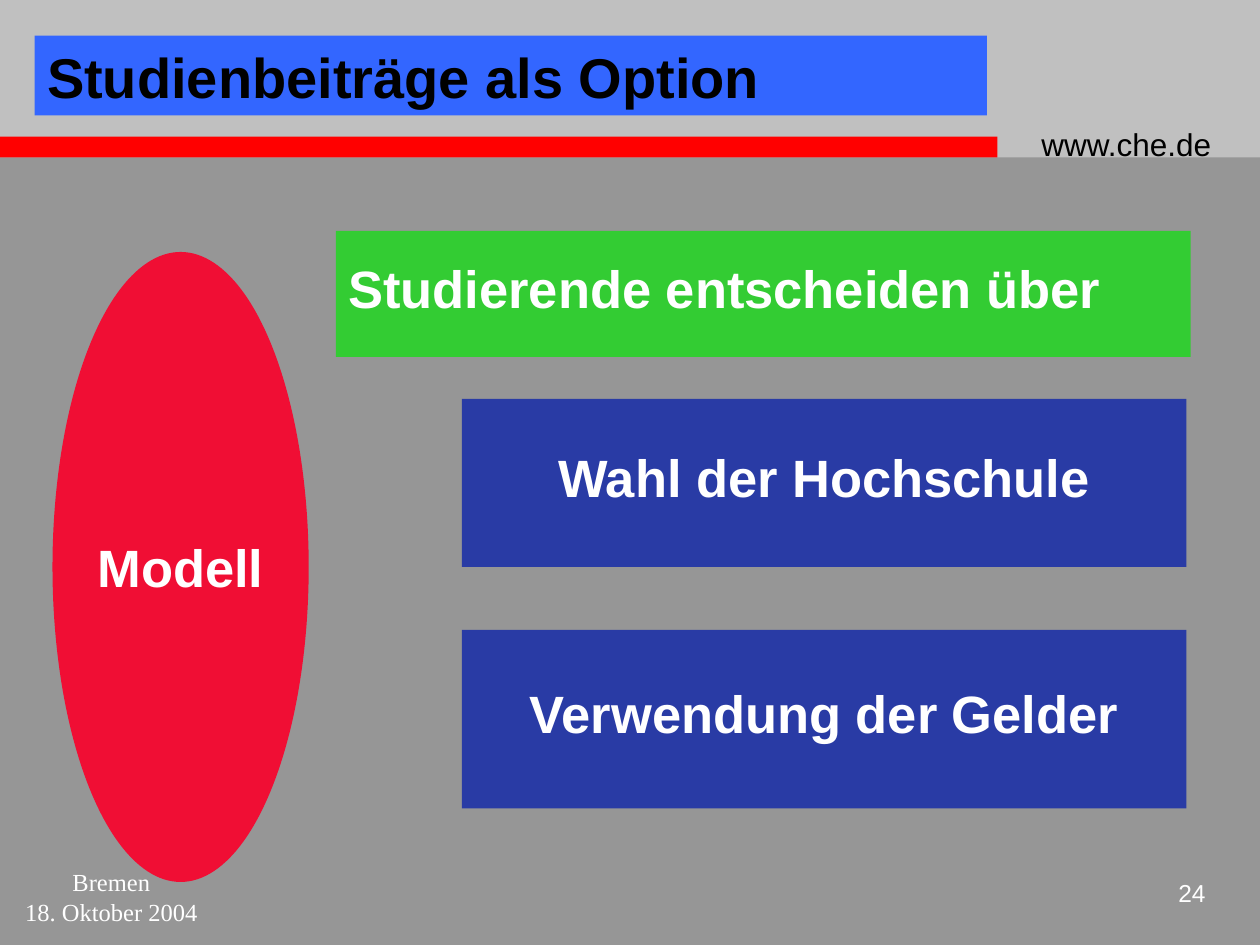
"""Builds the slide "Studienbeiträge als Option" on a grid of 120 columns by 90 rows."""
import pptx
import pptx.dml.color
import pptx.enum.shapes
import pptx.enum.text
import pptx.util

COLORS = {
    "background": "969696",
    "header": "C0C0C0",
    "rule": "FF0000",
    "title": "3366FF",
    "lead": "33CC33",
    "choice": "293BA5",
    "model": "F00E34",
    "dark": "000000",
    "light": "FFFFFF",
}
RECTANGLE = pptx.enum.shapes.MSO_SHAPE.RECTANGLE
OVAL = pptx.enum.shapes.MSO_SHAPE.OVAL
LEFT = pptx.enum.text.PP_ALIGN.LEFT
CENTER = pptx.enum.text.PP_ALIGN.CENTER
RIGHT = pptx.enum.text.PP_ALIGN.RIGHT

deck = pptx.Presentation()
deck.slide_width = pptx.util.Inches(10)
deck.slide_height = pptx.util.Inches(7.5)
column = deck.slide_width / 120
row = deck.slide_height / 90
slide = deck.slides.add_slide(deck.slide_layouts[6])


def paint(fill, color):
    fill.solid()
    fill.fore_color.rgb = pptx.dml.color.RGBColor.from_string(COLORS[color])


def write(box, lines, size, color, align, font="Arial", bold=False, spacing=None):
    for index, line in enumerate(lines):
        para = box.text_frame.paragraphs[0] if index == 0 else box.text_frame.add_paragraph()
        for name, value in {"alignment": align, "line_spacing": spacing}.items():
            setattr(para, name, value)
        span = para.add_run()
        span.text = line
        for name, value in {"name": font, "size": pptx.util.Pt(size), "bold": bold}.items():
            setattr(span.font, name, value)
        paint(span.font.fill, color)


paint(slide.background.fill, "background")

labels = [
    ((98, 11.3, 21, 4.8), ["www.che.de"], 18, "dark", LEFT, "Arial"),
    ((0, 82, 21.2, 6), ["Bremen", "18. Oktober 2004"], 14, "light", CENTER, "Times New Roman"),
    ((109, 83, 7, 5), ["24"], 14, "light", RIGHT, "Arial"),
]
panels = [
    (RECTANGLE, (0, 0, 120, 15), "header", None),
    (RECTANGLE, (0, 13, 95, 2), "rule", None),
    (RECTANGLE, (32, 22, 81.4, 12), "lead",
     (["Studierende entscheiden über"], 30, "light", LEFT, "Arial", True, 0.75)),
    (RECTANGLE, (44, 38, 69, 16), "choice",
     (["Wahl der Hochschule"], 30, "light", CENTER, "Arial", True, 0.75)),
    (RECTANGLE, (44, 60, 69, 17), "choice",
     (["Verwendung der Gelder"], 30, "light", CENTER, "Arial", True, 0.75)),
    (OVAL, (5, 24, 24.4, 60), "model",
     (["Modell"], 30, "light", CENTER, "Arial", True)),
    (RECTANGLE, (3.3, 3.4, 90.7, 7.6), "title",
     (["Studienbeiträge als Option"], 32, "dark", LEFT, "Arial", True)),
]

for kind, (left, top, width, height), color, text in panels:
    panel = slide.shapes.add_shape(
        kind, round(left * column), round(top * row), round(width * column), round(height * row))
    panel.shadow.inherit = False
    paint(panel.fill, color)
    panel.line.fill.background()
    if text:
        panel.text_frame.word_wrap = False
        panel.text_frame.vertical_anchor = pptx.enum.text.MSO_ANCHOR.MIDDLE
        write(panel, *text)

for (left, top, width, height), *text in labels:
    label = slide.shapes.add_textbox(
        round(left * column), round(top * row), round(width * column), round(height * row))
    label.text_frame.word_wrap = True
    write(label, *text)

deck.save("out.pptx")
